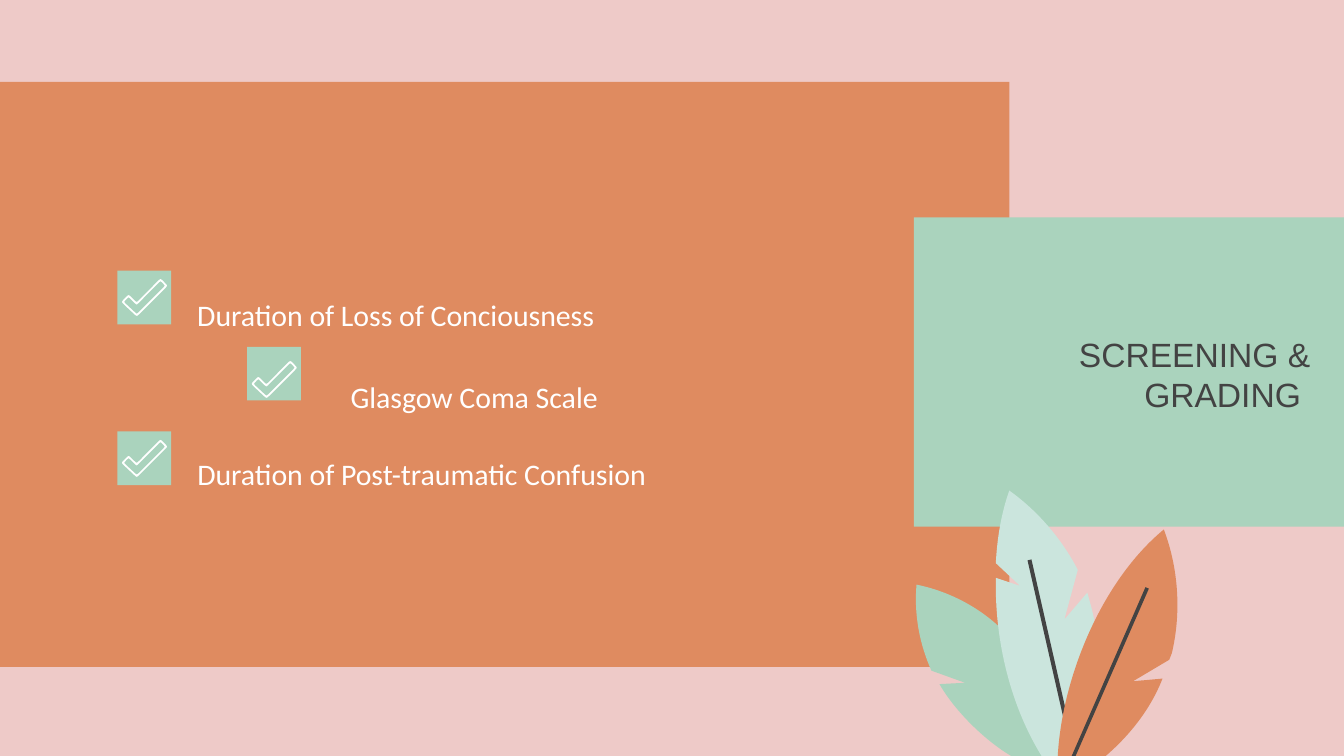
from lxml import etree
from pptx import Presentation
from pptx.dml.color import RGBColor
from pptx.enum.shapes import MSO_SHAPE
from pptx.enum.text import MSO_ANCHOR, MSO_AUTO_SIZE, PP_ALIGN
from pptx.oxml.ns import qn
from pptx.util import Pt

RECT = MSO_SHAPE.RECTANGLE
MIDDLE = MSO_ANCHOR.MIDDLE
NO_FIT = MSO_AUTO_SIZE.NONE
LEFT, RIGHT = PP_ALIGN.LEFT, PP_ALIGN.RIGHT

PINK, ORANGE, MINT, PALE = "EECAC8", "DF8B60", "AAD3BD", "CBE5DD"
DARK, WHITE = "434343", "FFFFFF"

MINT_LEAF = [(1.4, 50.4), (22.3, 54.7, 41.8, 66.2, 54.7, 82.8),
             (68.4, 99.4, 75.6, 121.7, 74.9, 143.3), (54, 143.3),
             (39.6, 135.4, 22.3, 118.8, 13.7, 103.7), (27.4, 103),
             (9.4, 96.5), (2.9, 82.1, 0, 66.2, 1.4, 50.4)]
PALE_LEAF = [(51.1, 0), (66.2, 10.8, 79.2, 25.9, 87.8, 42.5), (80.6, 69.1),
             (92.9, 54.7), (94.3, 59.8),
             (101.5, 84.2, 100.8, 119.5, 91.4, 143.3), (69.1, 143.3),
             (51.8, 115.9, 43.2, 80.6, 43.9, 46.8), (56.9, 51.1),
             (43.9, 38.9), (44.6, 25.2, 46.8, 12.2, 51.1, 0)]
PALE_VEIN = [(63, 36.9), (87.1, 142.6), (85, 143.1), (60.9, 37.4)]
ORANGE_LEAF = [(133.9, 20.9), (141.8, 41.8, 143.3, 65.5, 138.2, 87.1),
               (136.8, 90.7), (117.4, 102.2), (133.2, 100.8),
               (126.7, 117.4, 115.2, 131.8, 101.5, 143.3), (77, 143.3),
               (79.2, 100.1, 100.8, 48.2, 133.9, 20.9)]
ORANGE_VEIN = [(124.1, 51.8), (125.9, 52.6), (86.2, 143.3), (84.4, 142.6)]

TICK_OUTER = [(20.7, -0.7), (24.5, 3.2), (8, 19.7), (-0.3, 11.9),
              (3.6, 7.9), (7.9, 12.2)]
TICK_INNER = [(20.7, 0.6), (23.2, 3.2), (8, 18.4), (1, 11.9),
              (3.6, 9.2), (7.9, 13.5)]


def rgb(color):
    return RGBColor.from_string(color)


def paint(sp, color):
    sp.shadow.inherit = False
    sp.fill.solid()
    sp.fill.fore_color.rgb = rgb(color)
    sp.line.fill.background()


def add_rect(s, left, top, width, height, color):
    sp = s.shapes.add_shape(RECT, Pt(left), Pt(top), Pt(width), Pt(height))
    paint(sp, color)


def round_corners(corners, cut):
    outline = []
    for i, corner in enumerate(corners):
        ends = []
        for other in (corners[i - 1], corners[(i + 1) % len(corners)]):
            dx, dy = other[0] - corner[0], other[1] - corner[1]
            share = cut / (dx * dx + dy * dy) ** 0.5
            ends.append((corner[0] + dx * share, corner[1] + dy * share))
        outline += [ends[0], corner + corner + ends[1]]
    return outline


def bend_curves(sp, outlines):
    nodes = iter(list(next(sp.element.iter(qn("a:path")))))
    for outline in outlines:
        for step in outline:
            node = next(nodes)
            if len(step) == 6:
                curve = etree.Element(qn("a:cubicBezTo"))
                node.addprevious(curve)
                for part in (node, next(nodes), next(nodes)):
                    curve.append(part[0])
                    part.getparent().remove(part)
        next(nodes)


def add_outline(shapes, left, top, outlines, color):
    builder = None
    for outline in outlines:
        points = [(Pt(left + step[i]), Pt(top + step[i + 1]))
                  for step in outline for i in range(0, len(step), 2)]
        if builder is None:
            builder = shapes.build_freeform(*points[0], scale=1.0)
        else:
            builder.move_to(*points[0])
        builder.add_line_segments(points[1:], close=True)
    sp = builder.convert_to_shape()
    bend_curves(sp, outlines)
    paint(sp, color)


def write(sp, text, size=16, font="Calibri", color=WHITE, align=LEFT,
          insets=(7.2, 7.2, 7.2, 7.2), spacing=None, after=None):
    tf = sp.text_frame
    tf.word_wrap = True
    tf.auto_size = NO_FIT
    tf.vertical_anchor = MIDDLE
    tf.margin_left, tf.margin_top, tf.margin_right, tf.margin_bottom = map(Pt, insets)
    p = tf.paragraphs[0]
    p.alignment = align
    if spacing:
        p.line_spacing = spacing
    if after:
        p.space_after = Pt(after)
    r = p.add_run()
    r.text = text
    r.font.size, r.font.name = Pt(size), font
    r.font.color.rgb = rgb(color)


def add_panels(s, left, top):
    add_rect(s, left, top, 540.7, 313.4, ORANGE)
    add_rect(s, left + 489.6, top + 72.5, 230.4, 165.8, MINT)


def place_title(s, left, top, width, height):
    sp = s.shapes.title
    sp.left, sp.top, sp.width, sp.height = Pt(left), Pt(top), Pt(width), Pt(height)
    write(sp, "SCREENING & GRADING ", size=18, font="Arial", color=DARK, align=RIGHT)
    sp.element.getparent().append(sp.element)


def add_check_item(s, left, top, text, text_dx, text_dy, width, height, tick_dy):
    add_rect(s, left, top, 28.8, 28.8, MINT)
    ticks = [round_corners(TICK_OUTER, 2), round_corners(TICK_INNER, 1.2)]
    add_outline(s.shapes, left + 2.4, top + tick_dy, ticks, WHITE)
    sp = s.shapes.add_textbox(Pt(left + text_dx), Pt(top + text_dy), Pt(width), Pt(height))
    write(sp, text, insets=(7.2, 15.8, 7.2, 0), spacing=1.15, after=16)


def add_leaves(s, left, top):
    group = s.shapes.add_group_shape()
    for outline, color in ((MINT_LEAF, MINT), (PALE_LEAF, PALE), (PALE_VEIN, DARK),
                           (ORANGE_LEAF, ORANGE), (ORANGE_VEIN, DARK)):
        add_outline(group.shapes, left, top, [outline], color)


def main():
    prs = Presentation()
    prs.slide_width, prs.slide_height = Pt(720), Pt(405)
    s = prs.slides.add_slide(prs.slide_layouts[5])
    s.background.fill.solid()
    s.background.fill.fore_color.rgb = rgb(PINK)
    add_panels(s, 0, 43.9)
    place_title(s, 514.1, 173.9, 195.1, 53.3)
    add_check_item(s, 62.9, 145, "Duration of Loss of Conciousness",
                   35.7, -0.3, 347.8, 28.8, 4.9)
    add_check_item(s, 132.4, 185.8, "Glasgow Coma Scale",
                   48.3, 3.9, 222.5, 26.6, 8)
    add_check_item(s, 62.9, 231.2, "Duration of Post-traumatic Confusion",
                   35.7, -0.1, 267.1, 26.6, 4.9)
    add_leaves(s, 489.6, 262.8)
    prs.save("out.pptx")


if __name__ == "__main__":
    main()
